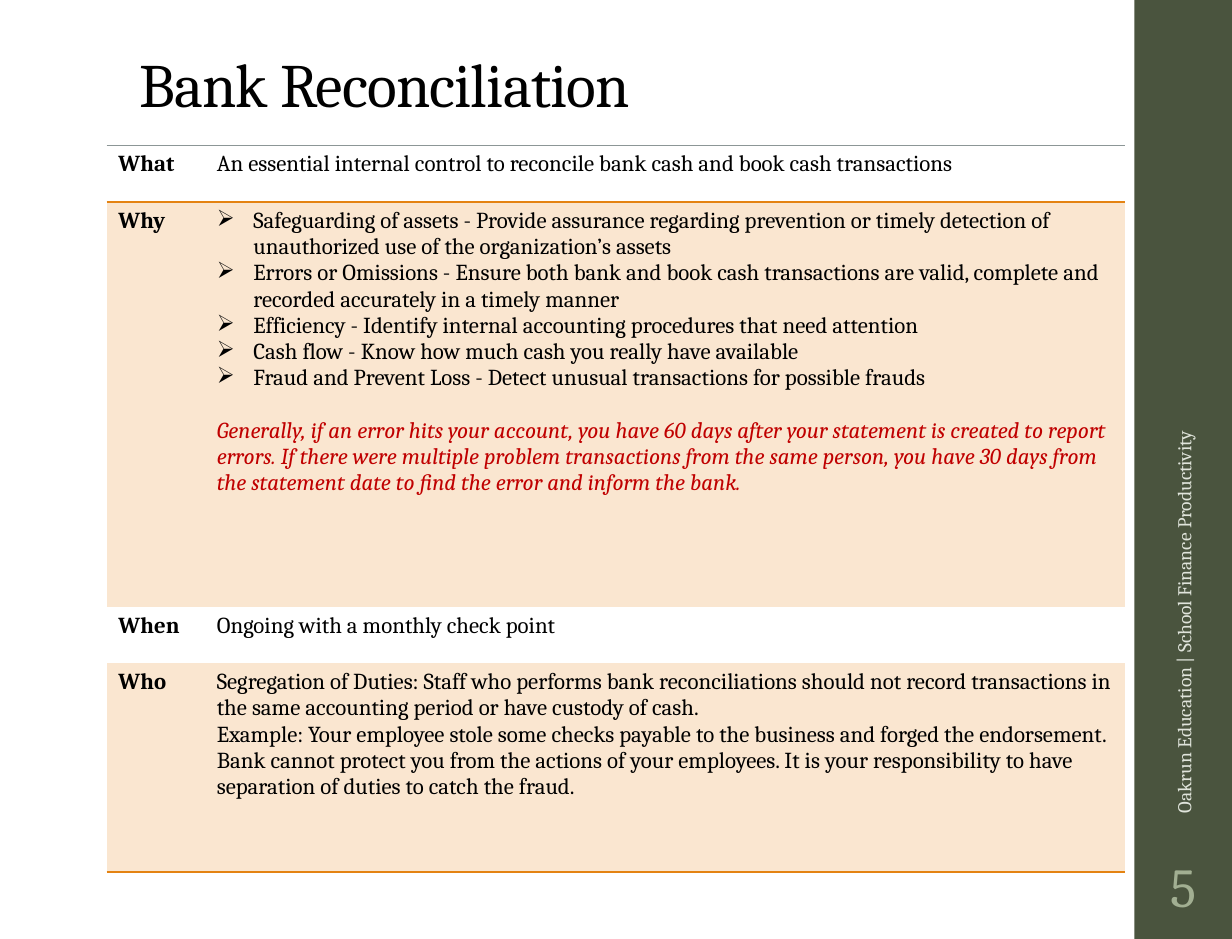
import pptx
import pptx.util
import pptx.dml.color
import pptx.enum.shapes
import pptx.enum.text
import pptx.oxml
import pptx.oxml.ns

Cm = pptx.util.Cm
Pt = pptx.util.Pt
RGBColor = pptx.dml.color.RGBColor
ANCHOR = pptx.enum.text.MSO_ANCHOR
ALIGN = pptx.enum.text.PP_ALIGN

FONT = "Cambria"
BLACK = RGBColor(0x00, 0x00, 0x00)
RED = RGBColor(0xC0, 0x00, 0x00)
GREEN = RGBColor(0x4A, 0x54, 0x3E)
SAGE = RGBColor(0xA2, 0xAF, 0x92)
PALE = RGBColor(0xE0, 0xE4, 0xDB)
ORANGE = RGBColor(0xE4, 0x83, 0x12)
PEACH = RGBColor(0xFA, 0xE6, 0xD0)
GREY = RGBColor(0x8C, 0x96, 0x96)
PLAIN = "{2D5ABB26-0587-4C30-8999-92F81FD0307C}"  # table style without grid

WHY = [
    "Safeguarding of assets - Provide assurance regarding prevention or timely "
    "detection of unauthorized use of the organization’s assets",
    "Errors or Omissions - Ensure both bank and book cash transactions are valid, "
    "complete and recorded accurately in a timely manner",
    "Efficiency - Identify internal accounting procedures that need attention",
    "Cash flow - Know how much cash you really have available",
    "Fraud and Prevent Loss - Detect unusual transactions for possible frauds",
]
NOTE = (
    "Generally, if an error hits your account, you have 60 days after your statement "
    "is created to report errors. If there were multiple problem transactions from "
    "the same person, you have 30 days from the statement date to find the error and "
    "inform the bank."
)
WHO = [
    "Segregation of Duties: Staff who performs bank reconciliations should not record "
    "transactions in the same accounting period or have custody of cash.",
    "Example: Your employee stole some checks payable to the business and forged the "
    "endorsement. Bank cannot protect you from the actions of your employees. It is "
    "your responsibility to have separation of duties to catch the fraud.",
]

# Label, height in cm, shaded, paragraphs as (text, format)
ROWS = [
    ("What", 1.22, False, [("An essential internal control to reconcile bank cash "
                            "and book cash transactions", {})]),
    ("Why", 8.76, True, [(text, {"mark": "➢"}) for text in WHY]
     + [(NOTE, {"color": RED, "italic": True, "before": 16})]),
    ("When", 1.22, False, [("Ongoing with a monthly check point", {})]),
    ("Who", 4.52, True, [(text, {}) for text in WHO]),
]


def write(frame, text, size=14, color=BLACK, bold=False, italic=False,
          align=ALIGN.LEFT, before=0, lines=None, track=None, mark=None):
    """Put text in the first paragraph if it is empty, else in a new one."""
    para = frame.paragraphs[-1]
    if para.runs:
        para = frame.add_paragraph()
    para.alignment = align
    para.space_before = Pt(before)
    if lines:
        para.line_spacing = lines
    run = para.add_run()
    run.text = text
    font = run.font
    font.name, font.size, font.bold, font.italic = FONT, Pt(size), bold, italic
    font.color.rgb = color
    if track:
        run._r.get_or_add_rPr().set("spc", str(int(track * 100)))
    if mark:
        props = para._p.get_or_add_pPr()
        props.set("marL", str(Cm(0.79)))
        props.set("indent", str(Cm(-0.79)))
        bullet = pptx.oxml.parse_xml(
            f'<a:buChar {pptx.oxml.ns.nsdecls("a")} char="{mark}"/>')
        props.append(bullet)


def add_text(slide, box, text, anchor=ANCHOR.MIDDLE, side=0.25, turn=0, **look):
    shape = slide.shapes.add_textbox(*[Cm(n) for n in box])
    shape.rotation = turn
    frame = shape.text_frame
    frame.word_wrap = True
    frame.vertical_anchor = anchor
    frame.margin_left = frame.margin_right = Cm(side)
    write(frame, text, **look)


def rule(cell, edge, color, width):
    """Draw one cell border; edge is lnT or lnB."""
    line = pptx.oxml.parse_xml(
        f'<a:{edge} {pptx.oxml.ns.nsdecls("a")} w="{Pt(width)}"><a:solidFill>'
        f'<a:srgbClr val="{color}"/></a:solidFill></a:{edge}>')
    cell._tc.get_or_add_tcPr().insert(0, line)


def add_side(slide, box):
    """Green band with the running title and the page number."""
    left, top, width, height = box
    band = slide.shapes.add_shape(
        pptx.enum.shapes.MSO_SHAPE.RECTANGLE, *[Cm(n) for n in box])
    band.shadow.inherit = False
    band.fill.solid()
    band.fill.fore_color.rgb = GREEN
    band.line.fill.background()

    add_text(slide, (left + 0.05, top + 18.29, width - 0.1, 1.75), "5",
             side=0.08, size=33.6, color=SAGE, align=ALIGN.CENTER)
    # The box is centred on the band before it is turned
    long, thick = 10.62, 0.79
    add_text(slide, (left + (width - long) / 2 + 0.01, top + 12.14, long, thick),
             "Oakrun Education | School Finance Productivity",
             turn=270, size=12, color=PALE)


def add_grid(slide, box):
    """Table of what, why, when and who."""
    left, top, width, height = box
    grid = slide.shapes.add_table(
        len(ROWS), 2, Cm(left), Cm(top), Cm(width), Cm(height)).table
    grid.first_row = grid.horz_banding = False
    grid._tbl.tblPr.find(pptx.oxml.ns.qn("a:tableStyleId")).text = PLAIN
    first = 2.13
    grid.columns[0].width = Cm(first)
    grid.columns[1].width = Cm(width - first)

    for index, (label, tall, shaded, paras) in enumerate(ROWS):
        grid.rows[index].height = Cm(tall)
        head, body = grid.cell(index, 0), grid.cell(index, 1)
        write(head.text_frame, label, bold=True)
        for text, look in paras:
            write(body.text_frame, text, **look)
        for cell in (head, body):
            if shaded:
                cell.fill.solid()
                cell.fill.fore_color.rgb = PEACH
            else:
                cell.fill.background()
            if index in (0, len(ROWS) - 1):
                rule(cell, "lnB", ORANGE, 1)
            if index == 0:
                rule(cell, "lnT", GREY, 0.5)


def main():
    deck = pptx.Presentation()
    deck.slide_width, deck.slide_height = Cm(26.67), Cm(20.32)
    slide = deck.slides.add_slide(deck.slide_layouts[6])
    add_side(slide, (24.56, 0, 2.11, 20.32))
    add_text(slide, (2.77, 1.09, 21.2, 1.65), "Bank Reconciliation",
             anchor=ANCHOR.BOTTOM, size=37.8, lines=0.9, track=-0.5)
    add_grid(slide, (2.31, 3.15, 22.05, sum(row[1] for row in ROWS)))
    deck.save("out.pptx")


if __name__ == "__main__":
    main()
